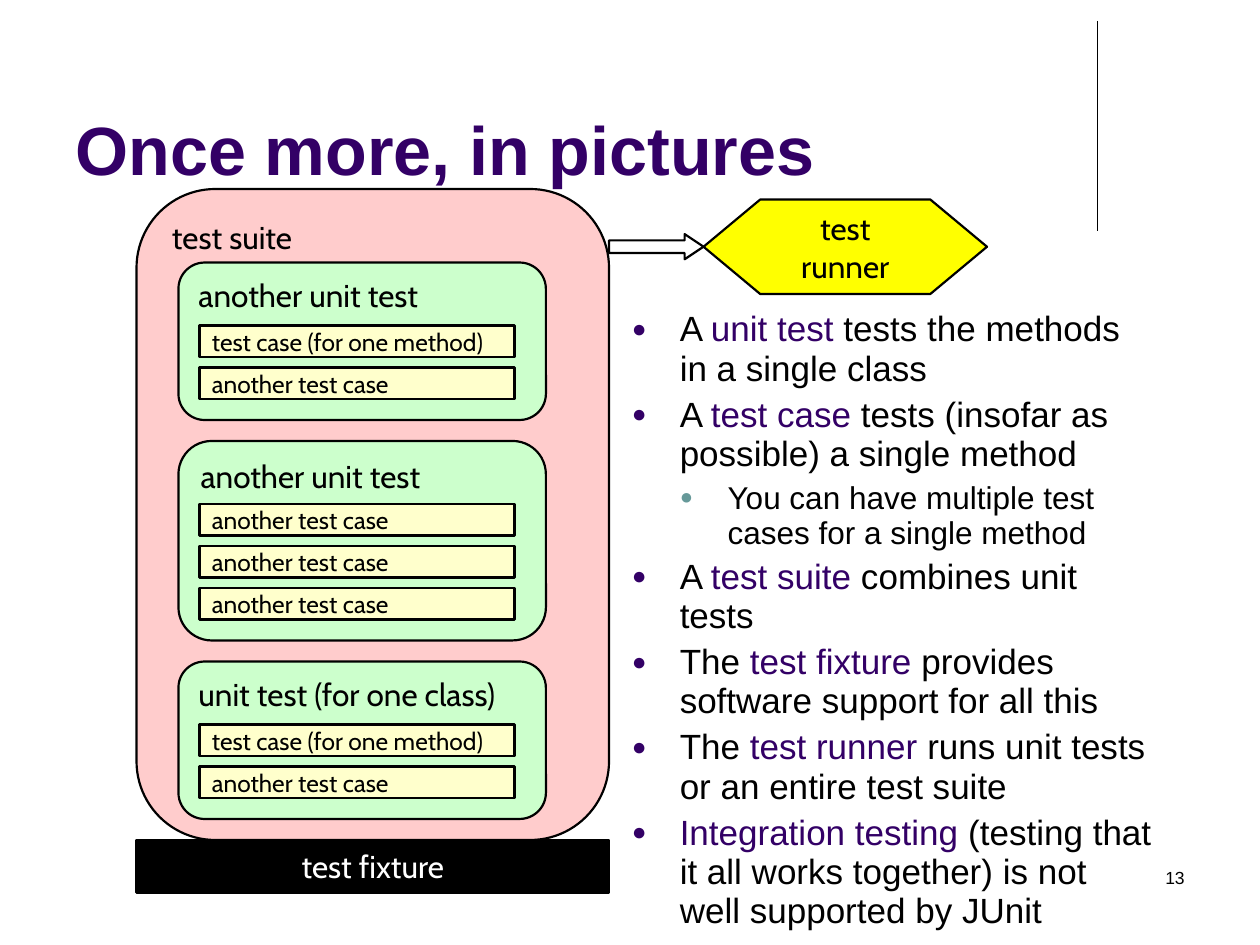
from lxml.etree import SubElement
from pptx import Presentation
from pptx.dml.color import RGBColor
from pptx.enum.shapes import MSO_CONNECTOR, MSO_SHAPE
from pptx.enum.text import MSO_ANCHOR, PP_ALIGN
from pptx.oxml.ns import qn
from pptx.util import Inches, Pt

CELL = Inches(1) / 12  # the grid has 120 columns and 90 rows
COLORS = {
    "black": "000000", "white": "FFFFFF", "purple": "330066", "teal": "669999",
    "pink": "FFCCCC", "green": "CCFFCC", "cream": "FFFFCC", "yellow": "FFFF00",
}
ROUNDED = MSO_SHAPE.FLOWCHART_ALTERNATE_PROCESS
BOX = MSO_SHAPE.FLOWCHART_PROCESS
FIRST_CASE, CASE_STEP = 6, 4

# Title, top row, rows high, test cases
UNIT_TESTS = [
    ("another unit test", 25, 15, ["test case (for one method)", "another test case"]),
    ("another unit test", 42, 19, ["another test case"] * 3),
    ("unit test (for one class)", 63, 15,
     ["test case (for one method)", "another test case"]),
]
# Level, then text before the term, the term, and text after it
DEFINITIONS = [
    (0, "A ", "unit test", " tests the methods in a single class"),
    (0, "A ", "test case", " tests (insofar as possible) a single method"),
    (1, "You can have multiple test cases for a single method", "", ""),
    (0, "A ", "test suite", " combines unit tests"),
    (0, "The ", "test fixture", " provides software support for all this"),
    (0, "The ", "test runner", " runs unit tests or an entire test suite"),
    (0, "", "Integration testing",
     " (testing that it all works together) is not well supported by JUnit"),
]


def rgb(name):
    return RGBColor.from_string(COLORS[name])


def grid(*values):
    return [round(value * CELL) for value in values]


def add_text(paragraph, text, size=18, font="Arial", color="black", bold=False,
             align=PP_ALIGN.LEFT):
    paragraph.alignment = align
    run = paragraph.add_run()
    run.text = text
    run.font.size, run.font.name, run.font.bold = Pt(size), font, bold
    run.font.color.rgb = rgb(color)


def add_bullet(paragraph, level, color):
    properties = paragraph._p.get_or_add_pPr()
    properties.set("marL", str(Inches(0.38 * (level + 1))))
    properties.set("indent", str(-Inches(0.38)))
    bullet_color = SubElement(properties, qn("a:buClr"))
    SubElement(bullet_color, qn("a:srgbClr"), val=COLORS[color])
    SubElement(properties, qn("a:buSzPct"), val="70000")
    SubElement(properties, qn("a:buFont"), typeface="Arial")
    SubElement(properties, qn("a:buChar"), char="●")


class SlideBuilder:
    """Places elements by column, row, columns wide and rows high."""

    line_width = Pt(1.25)
    diagram_font = "Cabin"

    def __init__(self, slide):
        self.slide = slide

    def text_box(self, *place, anchor=MSO_ANCHOR.TOP):
        frame = self.slide.shapes.add_textbox(*grid(*place)).text_frame
        frame.word_wrap = True
        frame.vertical_anchor = anchor
        return frame

    def shape(self, kind, *place, fill=None, text="", anchor=MSO_ANCHOR.MIDDLE, **style):
        shape = self.slide.shapes.add_shape(kind, *grid(*place))
        shape.shadow.inherit = False
        if fill:
            shape.fill.solid()
            shape.fill.fore_color.rgb = rgb(fill)
        else:
            shape.fill.background()
        shape.line.color.rgb = rgb("black")
        shape.line.width = self.line_width
        if text:
            frame = shape.text_frame
            frame.word_wrap = True
            frame.vertical_anchor = anchor
            add_text(frame.paragraphs[0], text, font=self.diagram_font, **style)
        return shape

    def line(self, *ends):
        line = self.slide.shapes.add_connector(MSO_CONNECTOR.STRAIGHT, *grid(*ends))
        line.line.color.rgb = rgb("black")
        line.line.width = Pt(0.75)
        SubElement(line._element.spPr, qn("a:effectLst"))

    def unit_test(self, title, row, height, cases):
        self.shape(ROUNDED, 17, row, 35, height, fill="green", text=title,
                   anchor=MSO_ANCHOR.TOP)
        for index, case in enumerate(cases):
            self.shape(BOX, 19, row + FIRST_CASE + index * CASE_STEP, 30, 3,
                       fill="cream", text=case, size=14)

    def definitions(self, *place):
        frame = self.text_box(*place)
        for index, (level, before, term, after) in enumerate(DEFINITIONS):
            paragraph = frame.add_paragraph() if index else frame.paragraphs[0]
            paragraph.level = level
            paragraph.line_spacing = 0.93
            if index:
                paragraph.space_before = Pt(4)
            add_bullet(paragraph, level, "teal" if level else "purple")
            for text, color in ((before, "black"), (term, "purple"), (after, "black")):
                if text:
                    add_text(paragraph, text, size=18 if level else 20, color=color)


def main():
    presentation = Presentation()
    presentation.slide_width, presentation.slide_height = Inches(10), Inches(7.5)
    slide = presentation.slides.add_slide(presentation.slide_layouts[6])
    builder = SlideBuilder(slide)

    builder.line(104.5, 2, 104.5, 22)
    title = builder.text_box(6, 1.6, 99, 17, anchor=MSO_ANCHOR.BOTTOM)
    add_text(title.paragraphs[0], "Once more, in pictures", size=39,
             color="purple", bold=True)
    builder.definitions(59, 29, 52, 56)
    number = builder.text_box(86, 82, 28, 6)
    add_text(number.paragraphs[0], "13", size=10, align=PP_ALIGN.RIGHT)

    builder.shape(ROUNDED, 13, 18, 45, 62, fill="pink", text="test suite",
                  anchor=MSO_ANCHOR.TOP)
    for unit_test in UNIT_TESTS:
        builder.unit_test(*unit_test)
    builder.shape(BOX, 13, 80, 45, 5, fill="black", text="test fixture",
                  color="white", align=PP_ALIGN.CENTER)
    builder.shape(MSO_SHAPE.FLOWCHART_PREPARATION, 67, 19, 27, 9, fill="yellow",
                  text="test runner", align=PP_ALIGN.CENTER)
    arrow = builder.shape(MSO_SHAPE.RIGHT_ARROW, 58, 22.3, 9, 2.4)
    arrow.adjustments[0], arrow.adjustments[1] = 0.5, 0.75

    presentation.save("out.pptx")


if __name__ == "__main__":
    main()
